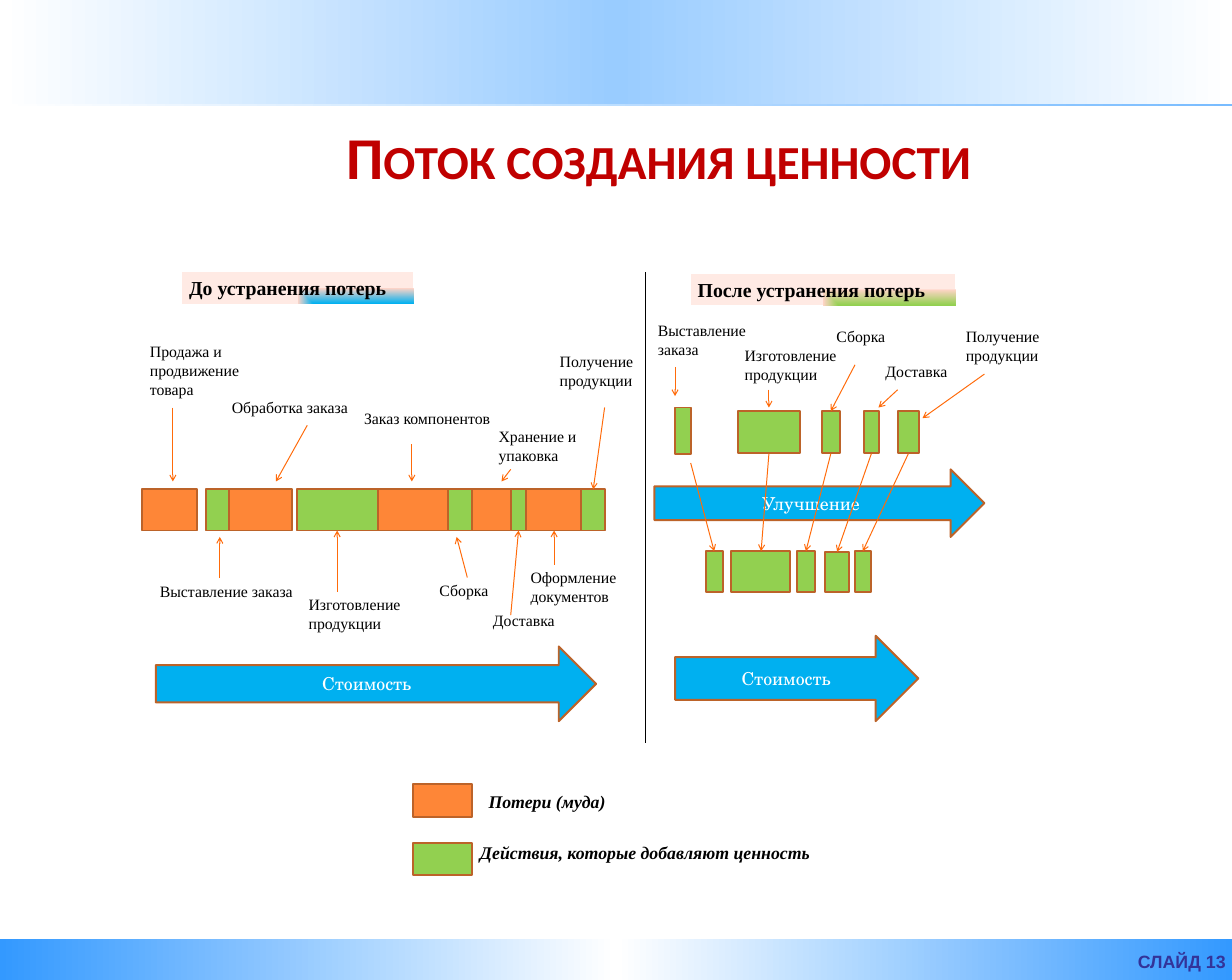
"""Build the value stream slide: the flow before and after removing waste."""
from lxml import etree
from pptx import Presentation
from pptx.dml.color import RGBColor
from pptx.enum.shapes import MSO_CONNECTOR, MSO_SHAPE
from pptx.enum.text import MSO_ANCHOR, PP_ALIGN
from pptx.oxml import parse_xml
from pptx.oxml.ns import nsdecls, qn
from pptx.util import Inches, Pt

RECTANGLE, RIGHT_ARROW = MSO_SHAPE.RECTANGLE, MSO_SHAPE.RIGHT_ARROW
STRAIGHT = MSO_CONNECTOR.STRAIGHT
LEFT, CENTER, RIGHT = PP_ALIGN.LEFT, PP_ALIGN.CENTER, PP_ALIGN.RIGHT
TOP, MIDDLE, BOTTOM = MSO_ANCHOR.TOP, MSO_ANCHOR.MIDDLE, MSO_ANCHOR.BOTTOM
SERIF = "Times New Roman"
COLORS = {
    "waste": "FE8637", "value": "92D050", "border": "BC6329", "pointer": "FF6B0A",
    "flow": "00B0F0", "title": "C00000", "number": "333399", "black": "000000",
    "white": "FFFFFF", "sky": "99CCFF", "edge": "79BCFF", "footer": "3399FF",
    "peach": "FFD4C7", "pale": "FFEAE4",
}

prs = Presentation()
prs.slide_width, prs.slide_height = Inches(17.32), Inches(13.78)
slide = prs.slides.add_slide(prs.slide_layouts[5])
shapes = slide.shapes


def add_block(box, fill, kind=RECTANGLE):
    """Add a filled, bordered shape at box = (left, top, width, height)."""
    block = shapes.add_shape(kind, *map(Inches, box))
    block.shadow.inherit = False
    block.fill.solid()
    block.fill.fore_color.rgb = RGBColor.from_string(COLORS[fill])
    block.line.color.rgb = RGBColor.from_string(COLORS["border"])
    block.line.width = Pt(2)
    return block


def write(holder, text, size, font=SERIF, color="black", bold=False, italic=False,
          align=LEFT, anchor=TOP):
    """Put one formatted paragraph into a shape."""
    frame = holder.text_frame
    frame.word_wrap = True
    frame.vertical_anchor = anchor
    paragraph = frame.paragraphs[0]
    paragraph.text = text
    paragraph.alignment = align
    paragraph.font.name, paragraph.font.size = font, Pt(size)
    paragraph.font.bold, paragraph.font.italic = bold, italic
    paragraph.font.color.rgb = RGBColor.from_string(COLORS[color])
    return paragraph


LINEAR = '<a:lin ang="0" scaled="0"/>'
CORNER = '<a:path path="rect"><a:fillToRect l="100000" t="100000"/></a:path>'
bands = [
    ((0, 13.2, 17.32, 0.58), ((0, "footer"), (50, "white"), (100, "footer")), LINEAR, ""),
    ((0, 0, 17.32, 1.49), ((0, "white"), (100, "edge")), LINEAR, ""),
    ((0, 0, 17.32, 1.47), ((0, "white"), (50, "sky"), (100, "white")), LINEAR, ""),
    ((2.56, 3.83, 3.25, 0.44), ((0, "flow"), (99, "peach"), (100, "pale")), CORNER,
     "До устранения потерь"),
    ((9.71, 3.85, 3.72, 0.44), ((0, "value"), (99, "peach"), (100, "pale")), CORNER,
     "После устранения потерь"),
]
for box, stops, direction, heading in bands:
    band = add_block(box, "white")
    band.line.fill.background()
    stop_xml = "".join(
        f'<a:gs pos="{position * 1000}"><a:srgbClr val="{COLORS[color]}"/></a:gs>'
        for position, color in stops)
    gradient = parse_xml(f'<a:gradFill {nsdecls("a")} rotWithShape="1">'
                         f'<a:gsLst>{stop_xml}</a:gsLst>{direction}</a:gradFill>')
    properties = band._element.spPr
    properties.replace(properties.find(qn("a:solidFill")), gradient)
    if heading:
        write(band, heading, 20, bold=True)

title = shapes.title
title.left, title.top, title.width, title.height = map(Inches, (1.81, 1.72, 14.32, 1.02))
headline = write(title, "Поток создания ценности", 60, "Calibri", "title", bold=True,
                 align=CENTER, anchor=BOTTOM)
headline.line_spacing = 1.2
headline._p.get_or_add_pPr().set("indent", str(Inches(0.58)))
headline.runs[0]._r.get_or_add_rPr().set("cap", "small")

slide_number = shapes.add_textbox(*map(Inches, (13.07, 13.38, 4.26, 0.29)))
write(slide_number, "СЛАЙД 13", 18, "Arial", "number", bold=True, align=RIGHT, anchor=MIDDLE)

before_steps = [
    (2, 0.77, "waste"), (2.89, 0.33, "value"), (3.22, 0.88, "waste"), (4.17, 1.14, "value"),
    (5.31, 0.99, "waste"), (6.3, 0.33, "value"), (6.63, 0.55, "waste"), (7.18, 0.22, "value"),
    (7.4, 0.77, "waste"), (8.17, 0.33, "value"),
]
for left, width, kind in before_steps:
    add_block((left, 6.88, width, 0.58), kind)

flows = [
    ("Стоимость", (2.19, 9.09, 6.19, 1.05)),
    ("Улучшение", (9.2, 6.6, 4.64, 0.95)),
    ("Стоимость", (9.49, 8.94, 3.42, 1.2)),
]
for name, box in flows:
    write(add_block(box, "flow", RIGHT_ARROW), name, 18, "TeX Gyre Schola", "white",
          align=CENTER, anchor=MIDDLE)

after_steps = [
    (9.49, 5.73, 0.22, 0.65), (10.37, 5.78, 0.88, 0.59), (11.56, 5.78, 0.25, 0.59),
    (12.14, 5.78, 0.22, 0.59), (12.62, 5.78, 0.3, 0.59),
    (9.93, 7.75, 0.23, 0.58), (10.28, 7.75, 0.83, 0.57), (11.2, 7.75, 0.26, 0.58),
    (11.6, 7.76, 0.34, 0.57), (12.02, 7.75, 0.22, 0.57),
]
for box in after_steps:
    add_block(box, "value")

step_labels = [
    ("Продажа и продвижение товара", (2.01, 4.76, 1.76, 0.91), (2.43, 5.73, 2.43, 6.77)),
    ("Выставление заказа", (2.15, 8.13, 2.27, 0.37), (3.09, 8.13, 3.09, 7.55)),
    ("Обработка заказа", (3.16, 5.55, 2.02, 0.37), (4.32, 5.98, 3.88, 6.77)),
    ("Изготовление продукции", (4.24, 8.32, 1.65, 0.64), (4.74, 8.32, 4.74, 7.46)),
    ("Заказ компонентов", (5.02, 5.7, 2.19, 0.37), (5.79, 6.25, 5.79, 6.77)),
    ("Сборка", (6.08, 8.12, 0.97, 0.37), (6.57, 8.12, 6.42, 7.55)),
    ("Хранение и упаковка", (6.91, 5.95, 1.38, 0.64), (7.18, 6.6, 7.05, 6.77)),
    ("Доставка", (6.83, 8.54, 1.17, 0.37), (7.18, 8.65, 7.29, 7.46)),
    ("Оформление документов", (7.36, 7.94, 1.61, 0.64), (7.79, 7.94, 7.79, 7.46)),
    ("Получение продукции", (7.77, 4.9, 1.43, 0.64), (8.5, 5.73, 8.34, 6.88)),
    ("Выставление заказа", (9.15, 4.46, 1.66, 0.64), (9.49, 5.16, 9.49, 5.57)),
    ("Изготовление продукции", (10.37, 4.81, 1.65, 0.64), (10.81, 5.48, 10.81, 5.73)),
    ("Сборка", (11.66, 4.55, 0.97, 0.37), (12.02, 5.13, 11.68, 5.78)),
    ("Доставка", (12.35, 5.04, 1.17, 0.37), (12.62, 5.48, 12.35, 5.73)),
    ("Получение продукции", (13.48, 4.55, 1.74, 0.64), (13.84, 5.26, 12.97, 5.88)),
]
for name, box, _ in step_labels:
    write(shapes.add_textbox(*map(Inches, box)), name, 16)

improvements = [
    (9.71, 6.51, 10.04, 7.75), (10.81, 6.38, 10.7, 7.75), (11.68, 6.38, 11.33, 7.75),
    (12.25, 6.38, 11.77, 7.76), (12.77, 6.38, 12.13, 7.75),
]
divider = (9.08, 3.83, 9.08, 10.45)
for ends in [divider] + [pointer for _, _, pointer in step_labels] + improvements:
    connector = shapes.add_connector(STRAIGHT, *map(Inches, ends))
    connector.line.width = Pt(1)
    color = "black" if ends == divider else "pointer"
    connector.line.color.rgb = RGBColor.from_string(COLORS[color])
    if ends != divider:
        etree.SubElement(connector.line._get_or_add_ln(), qn("a:tailEnd"), type="arrow")
    etree.SubElement(connector._element.spPr, qn("a:effectLst"))

legend = [
    ("waste", (5.8, 11.03, 0.84, 0.46), "Потери (муда)", (6.77, 11.07, 2.6, 0.6)),
    ("value", (5.81, 11.85, 0.82, 0.46), "Действия, которые добавляют ценность",
     (6.65, 11.79, 6.83, 0.6)),
]
for kind, swatch, meaning, box in legend:
    add_block(swatch, kind)
    write(shapes.add_textbox(*map(Inches, box)), meaning, 18, bold=True, italic=True)

prs.save("out.pptx")
